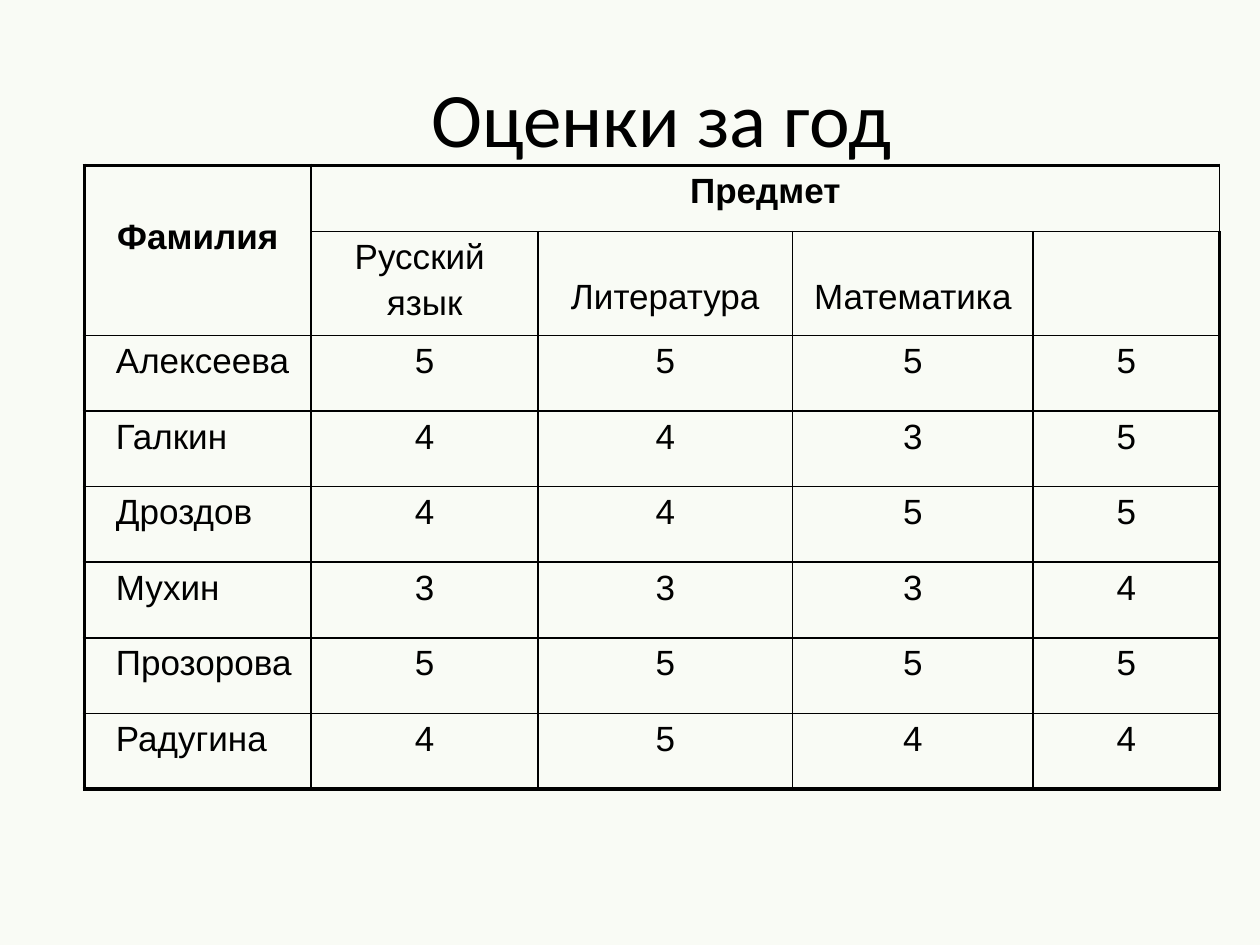
"""Builds a slide with a table of yearly marks by pupil and subject."""
from dataclasses import dataclass

from lxml.etree import SubElement
from pptx import Presentation as new_presentation
from pptx.dml.color import RGBColor
from pptx.enum.text import MSO_ANCHOR as Anchor, PP_ALIGN as Align
from pptx.oxml.ns import qn
from pptx.slide import Slide
from pptx.table import Table, _Cell as Cell
from pptx.text.text import TextFrame
from pptx.util import Inches, Pt

COLOURS = {"background": "F9FBF5", "ink": "000000"}
SLIDE_WIDTH, SLIDE_HEIGHT = Inches(10), Inches(7.5)
TABLE_LEFT, TABLE_TOP = 0.067, 0.175
COLUMNS = (0.18, 0.18, 0.202, 0.191, 0.148)
ROWS = (0.07, 0.11) + (0.08,) * 6
OUTER, INNER = Pt(2.25), Pt(1)
SUBJECTS = ("Русский \nязык", "Литература", "Математика")
MARKS = {
    "Алексеева": "5555",
    "Галкин": "4435",
    "Дроздов": "4455",
    "Мухин": "3334",
    "Прозорова": "5555",
    "Радугина": "4544",
}


@dataclass(frozen=True)
class Entry:
    row: int
    column: int
    text: str
    bold: bool = False
    align: Align = Align.CENTER
    top: float = 0.05
    left: float = 0.1


def write(frame: TextFrame, text: str, align: Align, **font: object) -> None:
    frame.text = text
    values = {"bold": False, **font}
    for paragraph in frame.paragraphs:
        paragraph.alignment = align
        paragraph.space_before = Pt(4)
        for run in paragraph.runs:
            for name, value in values.items():
                setattr(run.font, name, value)
            run.font.color.rgb = RGBColor.from_string(COLOURS["ink"])


def draw_borders(cell: Cell, row: int, column: int) -> None:
    outside = {
        "L": column == 0,
        "R": column == len(COLUMNS) - 1,
        "T": row == 0,
        "B": row == len(ROWS) - 1,
    }
    properties = cell._tc.get_or_add_tcPr()
    for side, is_outer in outside.items():
        line = SubElement(properties, qn(f"a:ln{side}"), w=str(OUTER if is_outer else INNER))
        fill = SubElement(line, qn("a:solidFill"))
        SubElement(fill, qn("a:srgbClr"), val=COLOURS["ink"])
    cell.fill.background()


def add_title(slide: Slide) -> None:
    box = slide.shapes.add_textbox(
        int(SLIDE_WIDTH * 0.1), int(SLIDE_HEIGHT * 0.04),
        int(SLIDE_WIDTH * 0.85), int(SLIDE_HEIGHT / 6),
    )
    for name, value in {"word_wrap": True, "vertical_anchor": Anchor.MIDDLE}.items():
        setattr(box.text_frame, name, value)
    write(box.text_frame, "Оценки за год", Align.CENTER, size=Pt(44), name="Calibri")


def add_grid(slide: Slide) -> Table:
    table = slide.shapes.add_table(
        len(ROWS), len(COLUMNS),
        int(SLIDE_WIDTH * TABLE_LEFT), int(SLIDE_HEIGHT * TABLE_TOP),
        int(SLIDE_WIDTH * sum(COLUMNS)), int(SLIDE_HEIGHT * sum(ROWS)),
    ).table
    for name in ("first_row", "horz_banding"):
        setattr(table, name, False)
    for column, share in zip(table.columns, COLUMNS):
        column.width = int(SLIDE_WIDTH * share)
    for row, share in zip(table.rows, ROWS):
        row.height = int(SLIDE_HEIGHT * share)
    for row in range(len(ROWS)):
        for column in range(len(COLUMNS)):
            draw_borders(table.cell(row, column), row, column)
    table.cell(0, 0).merge(table.cell(1, 0))
    table.cell(0, 1).merge(table.cell(0, len(COLUMNS) - 1))
    return table


def list_entries() -> list[Entry]:
    entries = [
        Entry(0, 0, "Фамилия", bold=True, top=0.42),
        Entry(0, 1, "Предмет", bold=True),
    ]
    for column, subject in enumerate(SUBJECTS, 1):
        entries.append(Entry(1, column, subject, top=0.05 if "\n" in subject else 0.37))
    for row, (surname, marks) in enumerate(MARKS.items(), 2):
        entries.append(Entry(row, 0, surname, align=Align.LEFT, left=0.25))
        entries += [Entry(row, column, mark) for column, mark in enumerate(marks, 1)]
    return entries


def fill_entry(table: Table, entry: Entry) -> None:
    cell = table.cell(entry.row, entry.column)
    layout = {
        "margin_top": Inches(entry.top),
        "margin_left": Inches(entry.left),
        "vertical_anchor": Anchor.TOP,
    }
    for name, value in layout.items():
        setattr(cell, name, value)
    write(cell.text_frame, entry.text, entry.align, size=Pt(20), name="Arial", bold=entry.bold)


def main() -> None:
    presentation = new_presentation()
    for name, value in {"slide_width": SLIDE_WIDTH, "slide_height": SLIDE_HEIGHT}.items():
        setattr(presentation, name, value)
    slide = presentation.slides.add_slide(presentation.slide_layouts[6])
    slide.background.fill.solid()
    slide.background.fill.fore_color.rgb = RGBColor.from_string(COLOURS["background"])
    add_title(slide)
    table = add_grid(slide)
    for entry in list_entries():
        fill_entry(table, entry)
    presentation.save("out.pptx")


if __name__ == "__main__":
    main()
